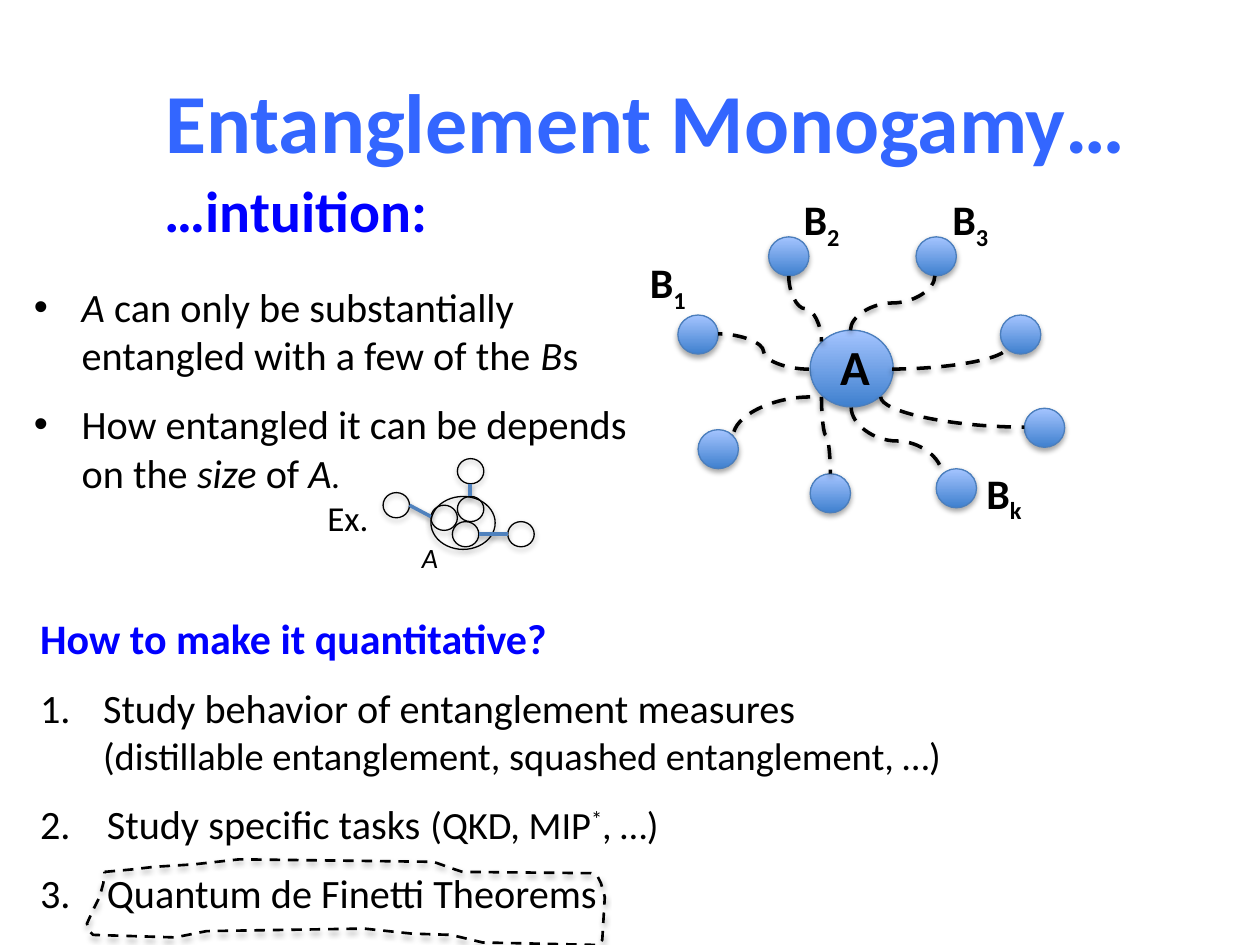
from lxml.etree import SubElement
from pptx import Presentation
from pptx.dml.color import RGBColor
from pptx.enum.dml import MSO_LINE
from pptx.enum.shapes import MSO_CONNECTOR, MSO_SHAPE
from pptx.enum.text import MSO_ANCHOR, PP_ALIGN
from pptx.oxml.ns import qn
from pptx.util import Inches, Pt

COLORS = {
    "title": "3366FF", "heading": "0000FF", "text": "000000",
    "node_dark": "3F80CE", "node_light": "A4C4FF",
    "node_edge": "4B7EBC", "bond": "4F81BD",
}
RGB = {name: RGBColor.from_string(value) for name, value in COLORS.items()}
BASELINES = {"sub": "-25000", "super": "30000"}


def cast_shadow(item, opacity=35, distance=1.8):
    """Give a shape or connector a soft shadow falling straight down."""
    properties = item._element.spPr
    effects = properties.find(qn("a:effectLst"))
    if effects is None:
        effects = SubElement(properties, qn("a:effectLst"))
    shadow = SubElement(effects, qn("a:outerShdw"), blurRad=str(Pt(3.1)),
                        dist=str(Pt(distance)), dir="5400000", rotWithShape="0")
    color = SubElement(shadow, qn("a:srgbClr"), val=COLORS["text"])
    SubElement(color, qn("a:alpha"), val=str(opacity * 1000))


def write(paragraph, runs, size, color="text", bold=False):
    """Add (text, style, optional size) runs; style is "", i, sub or super."""
    for text, style, *own_size in runs:
        run = paragraph.add_run()
        run.text = text
        font = run.font
        font.name = "Calibri"
        font.size = Pt(own_size[0] if own_size else size)
        font.bold = bold
        font.italic = style == "i"
        font.color.rgb = RGB[color]
        if style in BASELINES:
            run._r.get_or_add_rPr().set("baseline", BASELINES[style])


prs = Presentation()
prs.slide_width, prs.slide_height = Inches(10), Inches(7.5)
slide = prs.slides.add_slide(prs.slide_layouts[5])
shapes = slide.shapes

title = shapes.title
title.left, title.top = Inches(0.17), Inches(0)
title.width, title.height = Inches(9.91), Inches(1.91)
title.text_frame.vertical_anchor = MSO_ANCHOR.MIDDLE
title_line = title.text_frame.paragraphs[0]
title_line.alignment = PP_ALIGN.CENTER
write(title_line, [("Entanglement Monogamy…", "")], 48, "title", True)

# System A surrounded by the B systems
NODE = (0.32, 0.31)
nodes = [(6.43, 2.62, 0.66, 0.61)] + [
    (left, top, *NODE) for left, top in [
        (7.27, 1.88), (7.94, 2.5), (8.13, 3.24), (7.43, 3.72),
        (6.1, 1.88), (5.38, 2.5), (5.54, 3.41), (6.43, 3.76)]]
for bounds in nodes:
    node = shapes.add_shape(MSO_SHAPE.OVAL, *map(Inches, bounds))
    node.fill.gradient()
    node.fill.gradient_angle = 90
    for stop, name in zip(node.fill.gradient_stops, ("node_dark", "node_light")):
        stop.color.rgb = RGB[name]
    node.line.color.rgb = RGB["node_edge"]
    node.line.width = Pt(0.75)
    node.shadow.inherit = False
    cast_shadow(node)

# Curved links: unrotated begin and end points, rotation, preset
links = [
    (7.3, 2.74, 6.87, 2.07, 90, "curvedConnector3"),
    (7.08, 2.93, 7.99, 2.76, 0, "curvedConnector2"),
    (7.68, 2.7, 7.44, 3.84, 270, "curvedConnector2"),
    (7.38, 3.14, 6.85, 3.86, 270, "curvedConnector3"),
    (6.86, 3.42, 6.25, 3.49, 270, "curvedConnector3"),
    (6.65, 2.32, 6.13, 2.58, 270, "curvedConnector3"),
    (5.82, 3.46, 6.43, 3.15, 180, "curvedConnector2"),
    (5.7, 2.65, 6.42, 2.93, 180, "curvedConnector3"),
]
for *ends, rotation, preset in links:
    link = shapes.add_connector(MSO_CONNECTOR.CURVE, *map(Inches, ends))
    link.line.color.rgb = RGB["text"]
    link.line.width = Pt(2)
    link.line.dash_style = MSO_LINE.DASH
    properties = link._element.spPr
    properties.find(qn("a:xfrm")).set("rot", str(rotation * 60000))
    properties.find(qn("a:prstGeom")).set("prst", preset)
    cast_shadow(link, 38, 1.6)

# Dashed outline around the last item
outline_points = [
    (0.83, 6.92), (1.05, 6.9), (1.22, 6.88), (1.54, 6.86), (1.9, 6.82),
    (3.44, 6.84), (3.61, 6.9), (3.67, 6.92), (4.69, 6.93), (4.74, 6.95),
    (4.77, 7.01), (4.8, 7.12), (4.78, 7.46), (4.74, 7.5), (3.83, 7.48),
    (3.58, 7.42), (3.27, 7.41), (2.89, 7.37), (1.64, 7.39), (1.39, 7.44),
    (0.74, 7.42), (0.71, 7.39), (0.69, 7.33), (0.74, 7.22), (0.79, 7.12),
    (0.82, 7.01)]
start, *rest = [(Inches(x), Inches(y)) for x, y in outline_points]
builder = shapes.build_freeform(*start)
builder.add_line_segments(rest, close=True)
outline = builder.convert_to_shape()
outline.fill.background()
outline.line.color.rgb = RGB["text"]
outline.line.width = Pt(1.5)
outline.line.dash_style = MSO_LINE.DASH
outline.shadow.inherit = False
cast_shadow(outline)

# Example: a system A made of three particles, each bound to one outside
PARTICLE = (0.21, 0.2)
particles = [(3.42, 3.94, 0.51, 0.42)] + [
    (left, top, *PARTICLE) for left, top in [
        (4.03, 4.14), (3.63, 3.64), (3.04, 3.91),
        (3.42, 4.01), (3.63, 3.94), (3.59, 4.14)]]
for bounds in particles:
    particle = shapes.add_shape(MSO_SHAPE.OVAL, *map(Inches, bounds))
    particle.fill.background()
    particle.line.color.rgb = RGB["text"]
    particle.line.width = Pt(0.75)
    particle.shadow.inherit = False
    cast_shadow(particle)

for ends in [(3.42, 4.1, 3.25, 4.01), (3.73, 3.94, 3.73, 3.84),
             (3.8, 4.24, 4.03, 4.24)]:
    bond = shapes.add_connector(MSO_CONNECTOR.STRAIGHT, *map(Inches, ends))
    bond.line.color.rgb = RGB["bond"]
    bond.line.width = Pt(2)
    cast_shadow(bond, 38, 1.6)

labels = [
    ((1.21, 1.34, 3.14, 0.66), [("…intuition:", "")], 33, "heading", True),
    ((6.57, 2.62, 0.35, 0.57), [("A", "")], 28, "text", True),
    ((3.25, 4.24, 0.27, 0.37), [("A", "i")], 16, "text", False),
] + [((left, top, 0.8, 0.5), [("B", ""), (index, "sub")], 24, "text", True)
     for left, top, index in [(5.06, 1.99, "1"), (6.28, 1.49, "2"),
                              (7.46, 1.49, "3"), (7.73, 3.66, "k")]]
for bounds, runs, size, color, bold in labels:
    label = shapes.add_textbox(*map(Inches, bounds))
    label.text_frame.word_wrap = False
    write(label.text_frame.paragraphs[0], runs, size, color, bold)

# Body text: marker, left margin, space before, runs, size, color, bold
bodies = [
    ((0.17, 2.19, 5.04, 2.15), [
        ("•", 0.38, 0, [("A", "i"), (" can only be substantially entangled with a few of the ", ""),
                        ("B", "i"), ("s", "")], 23),
        ("•", 0.38, 12, [("How entangled it can be depends on the ", ""), ("size", "i"),
                         (" of ", ""), ("A", "i"), (".", "i", 20)], 23),
        (None, 2.33, 0, [("Ex.", "")], 20),
    ]),
    ((0.22, 4.81, 10.26, 2.56), [
        (None, 0, 0, [("How to make it quantitative?", "")], 24, "heading", True),
        (1, 0.5, 12, [("Study behavior of entanglement measures", "")], 23),
        (None, 0.5, 0, [("(distillable entanglement, squashed entanglement, …)", "")], 22),
        (2, 0.53, 12, [("Study specific tasks ", ""), ("(QKD, MIP", "", 22),
                       ("*", "super", 22), (", …)", "", 22)], 23),
        (3, 0.53, 12, [("Quantum de Finetti Theorems", "")], 23),
    ]),
]
for bounds, lines in bodies:
    frame = shapes.add_textbox(*map(Inches, bounds)).text_frame
    frame.word_wrap = True
    for position, (marker, margin, gap, *content) in enumerate(lines):
        paragraph = frame.add_paragraph() if position else frame.paragraphs[0]
        paragraph.space_before = Pt(gap)
        layout = paragraph._p.get_or_add_pPr()
        layout.set("marL", str(Inches(margin)))
        if marker:
            layout.set("indent", str(-Inches(margin)))
        if marker == "•":
            SubElement(layout, qn("a:buFont"), typeface="Arial")
            SubElement(layout, qn("a:buChar"), char=marker)
        elif marker:
            SubElement(layout, qn("a:buFont"), typeface="+mj-lt")
            SubElement(layout, qn("a:buAutoNum"), type="arabicPeriod",
                       startAt=str(marker))
        write(paragraph, *content)

prs.save("out.pptx")
